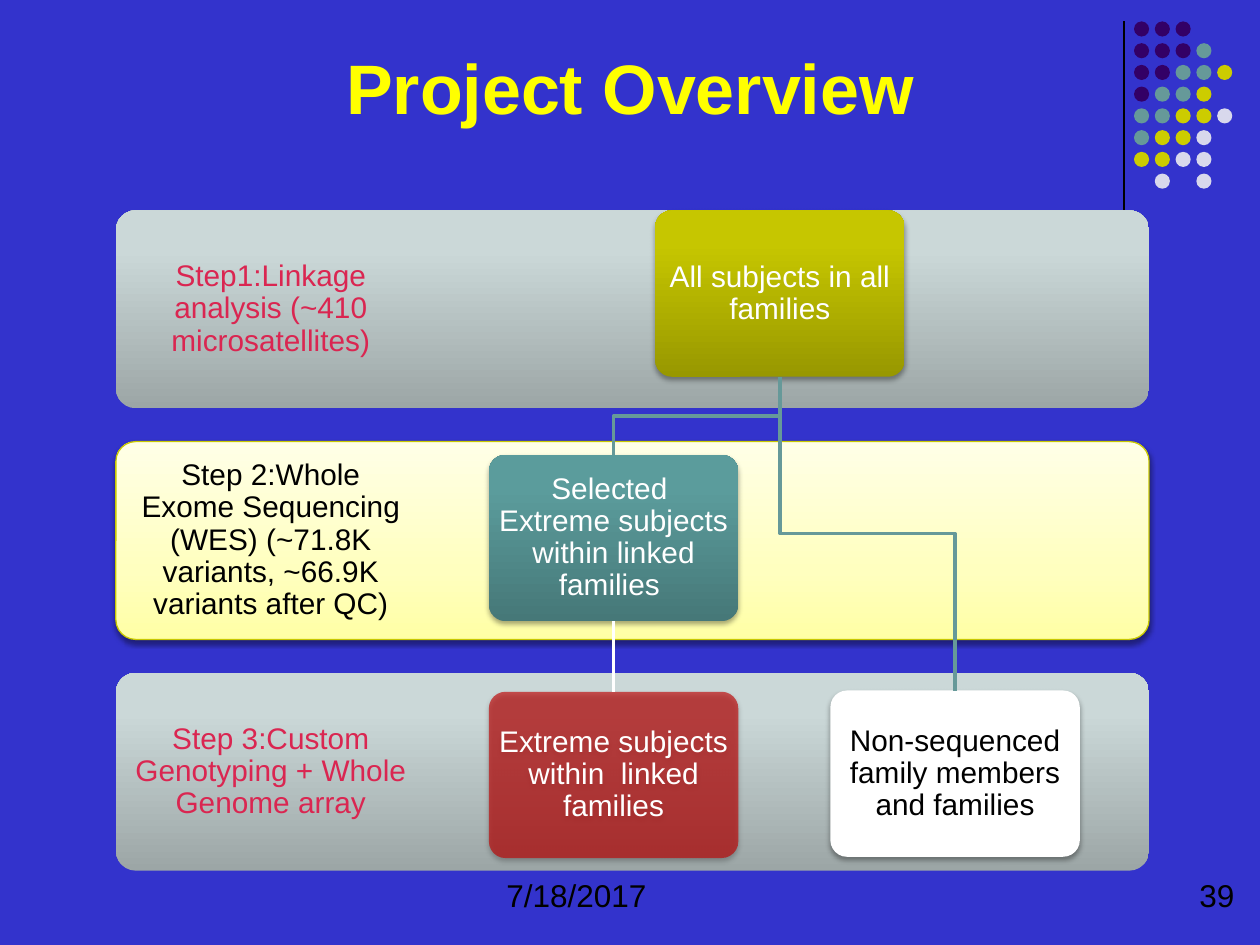
"""Build the Project Overview slide: three step bands with linked subject boxes."""
import dataclasses

import lxml.etree
import pptx
import pptx.dml.color
import pptx.enum.shapes
import pptx.enum.text
import pptx.oxml.ns
import pptx.util

Inches = pptx.util.Inches
Pt = pptx.util.Pt
SHAPE = pptx.enum.shapes.MSO_SHAPE
ALIGN = pptx.enum.text.PP_ALIGN
ANCHOR = pptx.enum.text.MSO_ANCHOR


@dataclasses.dataclass(frozen=True)
class Theme:
    """Colours, fills and type sizes of the slide."""
    font: str = "Arial"
    head: int = 40
    foot: int = 18
    body: int = 17
    back: str = "3333CC"
    title: str = "FFFF00"
    black: str = "000000"
    white: str = "FFFFFF"
    pink: str = "DA2651"
    teal: str = "669999"
    edge: str = "C8C800"
    red: str = "C00000"
    grey: tuple = ((0, "9CA6A6"), (80, "CBD8D8"), (100, "CCD9D9"))
    cream: tuple = ((0, "FFFFA5"), (35, "FFFFBF"), (100, "FFFFE7"))
    olive: tuple = ((0, "989800"), (80, "C6C600"), (100, "C7C700"))
    sea: tuple = ((0, "467878"), (80, "5B9C9C"), (100, "5B9E9E"))


THEME = Theme()
DOTS = ("PPP", "PPPT", "PPTTY", "PTTY", "TTYYW", "TYYW", "YYWW", " W W")
INKS = {"P": "330066", "T": THEME.teal, "Y": "CCCC00", "W": "D8D8EC"}
LEFT, TOP, WIDE, TALL, STEP = 0.92, 1.67, 8.2, 1.57, 1.835
BOX_W, BOX_H = 1.98, 1.32


def rgb(code):
    """Turn a hex code into a colour."""
    return pptx.dml.color.RGBColor.from_string(code)


def apply(item, values):
    """Set every attribute in a dict on an item."""
    for name, value in values.items():
        setattr(item, name, value)


def node(parent, tag, **values):
    """Add a drawing element with attributes."""
    child = lxml.etree.SubElement(parent, pptx.oxml.ns.qn("a:" + tag))
    for name, value in values.items():
        child.set(name, str(value))
    return child


def write(frame, text, size, color, inset=None, align=ALIGN.CENTER,
          anchor=ANCHOR.MIDDLE, space=0.9, bold=False):
    """Write one formatted paragraph in a text frame."""
    apply(frame, {"text": text, "word_wrap": True, "vertical_anchor": anchor,
                  "auto_size": pptx.enum.text.MSO_AUTO_SIZE.NONE})
    if inset is not None:
        sides = ("left", "top", "right", "bottom")
        apply(frame, {f"margin_{side}": Inches(inset) for side in sides})
    para = frame.paragraphs[0]
    apply(para, {"alignment": align, "line_spacing": space})
    font = para.runs[0].font
    apply(font, {"name": THEME.font, "size": Pt(size), "bold": bold})
    font.color.rgb = rgb(color)


def label(slide, area, text, size, color, **style):
    """Add a text box."""
    box = slide.shapes.add_textbox(*map(Inches, area))
    write(box.text_frame, text, size, color, **style)


def shade(shape, stops):
    """Fill a shape with a gradient that rises from the bottom."""
    shape.fill.gradient()
    shape.fill.gradient_angle = 90
    ramp = next(shape.element.spPr.iter(pptx.oxml.ns.qn("a:gsLst")))
    for old in list(ramp):
        ramp.remove(old)
    for place, color in stops:
        node(node(ramp, "gs", pos=place * 1000), "srgbClr", val=color)


def drop(shape, alpha, away):
    """Cast a soft shadow straight down."""
    effects = shape.element.spPr.find(pptx.oxml.ns.qn("a:effectLst"))
    cast = node(effects, "outerShdw", blurRad=Pt(3.1), dist=Pt(away),
                dir=5400000, rotWithShape=0)
    node(node(cast, "srgbClr", val=THEME.black), "alpha", val=alpha * 1000)


def form(slide, kind, area, fill, edge=None):
    """Add a preset shape with a plain or gradient fill."""
    shape = slide.shapes.add_shape(kind, *map(Inches, area))
    shape.shadow.inherit = False
    if isinstance(fill, tuple):
        shade(shape, fill)
    else:
        shape.fill.solid()
        shape.fill.fore_color.rgb = rgb(fill)
    if edge:
        shape.line.color.rgb = rgb(edge)
        shape.line.width = Pt(0.75)
    else:
        shape.line.fill.background()
    return shape


def band(slide, row, text, fill, color, edge=None):
    """Add a step band with its label at the left."""
    top = TOP + row * STEP
    shape = form(slide, SHAPE.ROUNDED_RECTANGLE, (LEFT, top, WIDE, TALL), fill, edge)
    shape.adjustments[0] = 0.1
    if edge:
        drop(shape, 38, 1.6)
    label(slide, (LEFT, top, 0.3 * WIDE, TALL), text, THEME.body, color, inset=0.13)


def card(slide, left, top, text, fill, color, alpha=None):
    """Add a rounded subject box."""
    shape = form(slide, SHAPE.ROUNDED_RECTANGLE, (left, top, BOX_W, BOX_H), fill)
    shape.adjustments[0] = 0.1
    drop(shape, 35, 1.8)
    if alpha:
        tint = next(shape.element.spPr.iter(pptx.oxml.ns.qn("a:srgbClr")))
        node(tint, "alpha", val=alpha * 1000)
    write(shape.text_frame, text, THEME.body, color, inset=0.03)
    return shape


def line(slide, start, end, color, width):
    """Add a straight connector without a shadow."""
    link = slide.shapes.add_connector(pptx.enum.shapes.MSO_CONNECTOR.STRAIGHT,
                                      *map(Inches, start + end))
    link.line.color.rgb = rgb(color)
    link.line.width = Pt(width)
    node(link.element.spPr, "effectLst")
    return link


def bend(slide, upper, lower):
    """Draw a stepped link from one box down to another."""
    x, y = upper.left + upper.width // 2, upper.top + upper.height
    end_x, end_y = lower.left + lower.width // 2, lower.top
    half = (y + end_y) // 2
    pen = slide.shapes.build_freeform(x, y)
    pen.add_line_segments([(x, half), (end_x, half), (end_x, end_y)], close=False)
    shape = pen.convert_to_shape()
    shape.shadow.inherit = False
    shape.fill.background()
    shape.line.color.rgb = rgb(THEME.teal)
    shape.line.width = Pt(2)


def motif(slide):
    """Draw the corner rule and its grid of dots."""
    line(slide, (8.92, 0.17), (8.92, 1.83), THEME.black, 0.75)
    for row, inks in enumerate(DOTS):
        for col, ink in enumerate(inks):
            if ink in INKS:
                area = (9 + col * 0.165, 0.17 + row * 0.1725, 0.12, 0.12)
                form(slide, SHAPE.OVAL, area, INKS[ink])


def main():
    """Build and save the slide."""
    deck = pptx.Presentation()
    apply(deck, {"slide_width": Inches(10), "slide_height": Inches(7.5)})
    slide = deck.slides.add_slide(deck.slide_layouts[5])
    slide.background.fill.solid()
    slide.background.fill.fore_color.rgb = rgb(THEME.back)
    motif(slide)
    title = slide.shapes.title
    apply(title, {"left": Inches(0.5), "top": Inches(0.3),
                  "width": Inches(9), "height": Inches(1.25)})
    write(title.text_frame, "Project Overview", THEME.head, THEME.title,
          anchor=ANCHOR.TOP, space=1.0, bold=True)
    band(slide, 0, "Step1:Linkage analysis (~410 microsatellites)", THEME.grey, THEME.pink)
    band(slide, 1, "Step 2:Whole Exome Sequencing (WES) (~71.8K variants, "
         "~66.9K variants after QC)", THEME.cream, THEME.black, THEME.edge)
    band(slide, 2, "Step 3:Custom Genotyping + Whole Genome array", THEME.grey, THEME.pink)
    root = card(slide, 5.2, 1.67, "All subjects in all families", THEME.olive, THEME.white)
    pick = card(slide, 3.88, 3.61, "Selected  Extreme subjects within linked families ",
                THEME.sea, THEME.white)
    kin = card(slide, 3.88, 5.49, "Extreme subjects within  linked families",
               THEME.red, THEME.white, alpha=64)
    rest = card(slide, 6.59, 5.48, "Non-sequenced family members and families",
                THEME.white, THEME.black)
    bend(slide, root, pick)
    bend(slide, root, rest)
    link = line(slide, (4.87, 4.93), (4.87, 5.49), THEME.white, 2)
    link.begin_connect(pick, 2)
    link.end_connect(kin, 0)
    for left, width, text in ((3.92, 2.33, "7/18/2017"), (9.42, 0.5, "39")):
        label(slide, (left, 6.9, width, 0.52), text, THEME.foot, THEME.black,
              align=ALIGN.LEFT, anchor=ANCHOR.TOP, space=1.0)
    deck.save("out.pptx")


if __name__ == "__main__":
    main()
